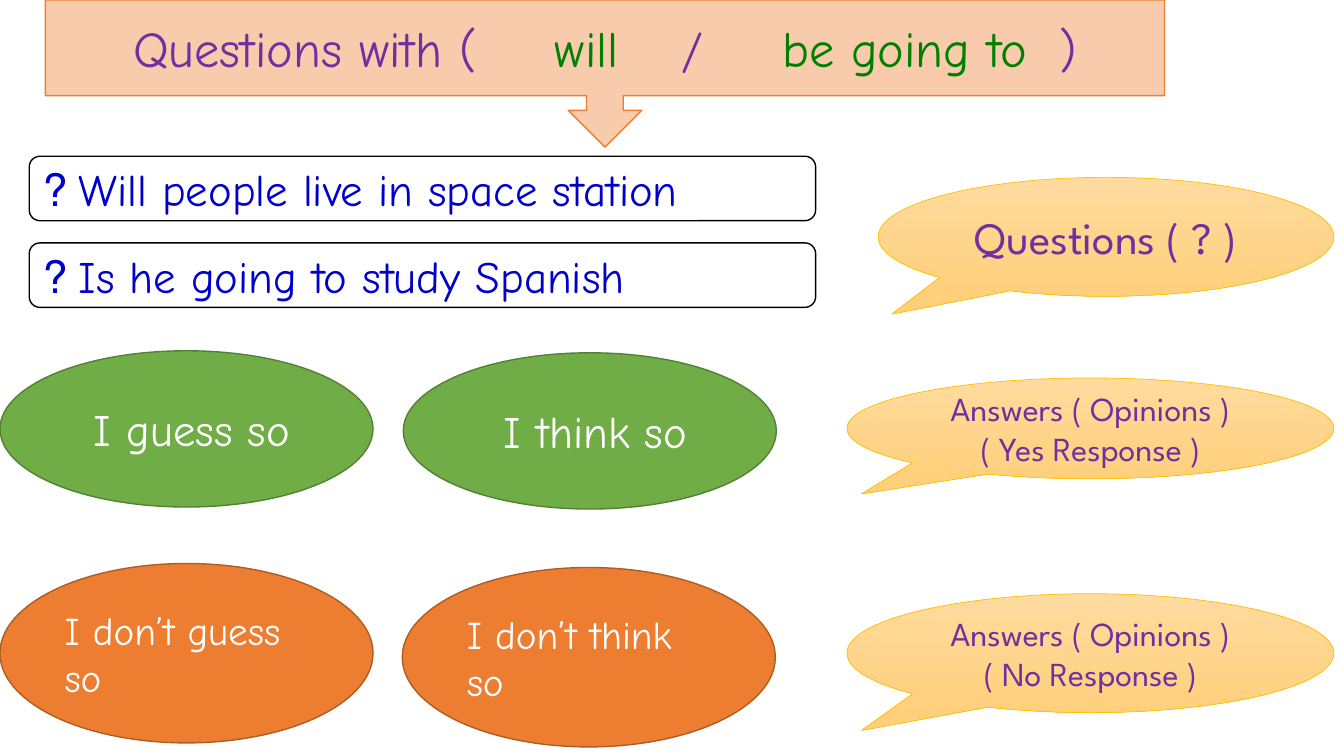
from pptx import Presentation, util as u
from pptx.dml.color import RGBColor
from pptx.enum import shapes, text

COLORS = {
    "white": "FFFFFF", "black": "000000", "blue": "0000CC", "purple": "7030A0",
    "word": "008000", "green": "70AD47", "green_edge": "538035",
    "orange": "ED7D31", "orange_edge": "AF5C24", "peach": "F8CBAD",
    "gold": "FFC000", "gold_top": "FFDB9E", "gold_bottom": "FFD07C",
}
SHAPE = shapes.MSO_SHAPE
LEFT, CENTER = text.PP_ALIGN.LEFT, text.PP_ALIGN.CENTER


def rgb(name):
    return RGBColor.from_string(COLORS[name])


class Lesson:
    """Draws the elements of a grammar lesson on one slide."""

    hand, label = "Comic Neue", "League Spartan"
    space = 11

    def __init__(self, slide):
        self.s = slide

    def shape(self, kind, box, fill, line, width=1):
        sp = self.s.shapes.add_shape(kind, *[u.Inches(v) for v in box])
        sp.shadow.inherit = False
        if fill:
            sp.fill.solid()
            sp.fill.fore_color.rgb = rgb(fill)
        sp.line.color.rgb = rgb(line)
        sp.line.width = u.Pt(width)
        sp.text_frame.word_wrap = True
        sp.text_frame.vertical_anchor = text.MSO_ANCHOR.MIDDLE
        return sp

    def style(self, p, font, size, color=None, align=CENTER, rtl=True):
        p.alignment = align
        p.font.name, p.font.size = font, u.Pt(size)
        if color:
            p.font.color.rgb = rgb(color)
        if rtl:
            p._p.get_or_add_pPr().set("rtl", "1")

    def title(self, box, parts):
        sp = self.shape(SHAPE.DOWN_ARROW_CALLOUT, box, "peach", "orange")
        p = sp.text_frame.paragraphs[0]
        self.style(p, self.hand, 36)
        for words, color, spaces in parts:
            r = p.add_run()
            r.text = words
            r.font.color.rgb = rgb(color)
            if spaces:
                gap = p.add_run()
                gap.text = " "
                gap.font._element.set("spc", str((spaces - 1) * self.space * 100))

    def question(self, top, words):
        sp = self.shape(SHAPE.ROUNDED_RECTANGLE, (0.29, top, 7.8, 0.64), "white", "black")
        p = sp.text_frame.paragraphs[0]
        p.text = words
        self.style(p, self.hand, 32, "blue", LEFT)

    def answer(self, left, top, height, words, fill, size, align):
        sp = self.shape(SHAPE.OVAL, (left, top, 3.7, height), fill, fill + "_edge")
        p = sp.text_frame.paragraphs[0]
        p.text = words
        self.style(p, self.hand, size, "white", align)

    def bubble(self, box, lines, size):
        sp = self.shape(SHAPE.OVAL_CALLOUT, box, None, "gold", 0.5)
        sp.adjustments[0], sp.adjustments[1] = -0.47, 0.65
        sp.fill.gradient()
        sp.fill.gradient_angle = 270
        for stop, color in zip(sp.fill.gradient_stops, ("gold_top", "gold_bottom")):
            stop.color.rgb = rgb(color)
        tf = sp.text_frame
        tf.margin_left = tf.margin_right = u.Inches(0.04)
        tf.margin_top = tf.margin_bottom = 0
        tf.text = "\n".join(lines)
        for p in tf.paragraphs:
            self.style(p, self.label, size, "purple", rtl=False)


def main():
    prs = Presentation()
    prs.slide_width, prs.slide_height = u.Inches(13.33), u.Inches(7.5)
    lesson = Lesson(prs.slides.add_slide(prs.slide_layouts[6]))

    lesson.question(1.55, "Will people live in space station ?")
    lesson.question(2.41, "Is he going to study Spanish ?")

    lesson.bubble((8.71, 1.76, 4.52, 1.18), ["Questions ( ? )"], 32)
    for top, height, reply in ((3.75, 1, "Yes"), (5.89, 1.18, "No")):
        lines = ["Answers ( Opinions )", f"( {reply} Response )"]
        lesson.bubble((8.4, top, 4.83, height), lines, 24)

    lesson.answer(0, 3.48, 1.55, "I guess so ", "green", 32, CENTER)
    lesson.answer(4, 3.5, 1.55, "I think so ", "green", 32, CENTER)
    lesson.answer(0, 5.59, 1.78, "I don’t guess so", "orange", 28, LEFT)
    lesson.answer(3.99, 5.63, 1.78, "I don’t think so", "orange", 28, LEFT)

    lesson.title((0.45, 0, 11.1, 1.46), [
        ("Questions with (", "purple", 5), ("will", "word", 4),
        ("/", "purple", 5), ("be going to", "word", 2), (")", "purple", 0),
    ])
    prs.save("out.pptx")


if __name__ == "__main__":
    main()
